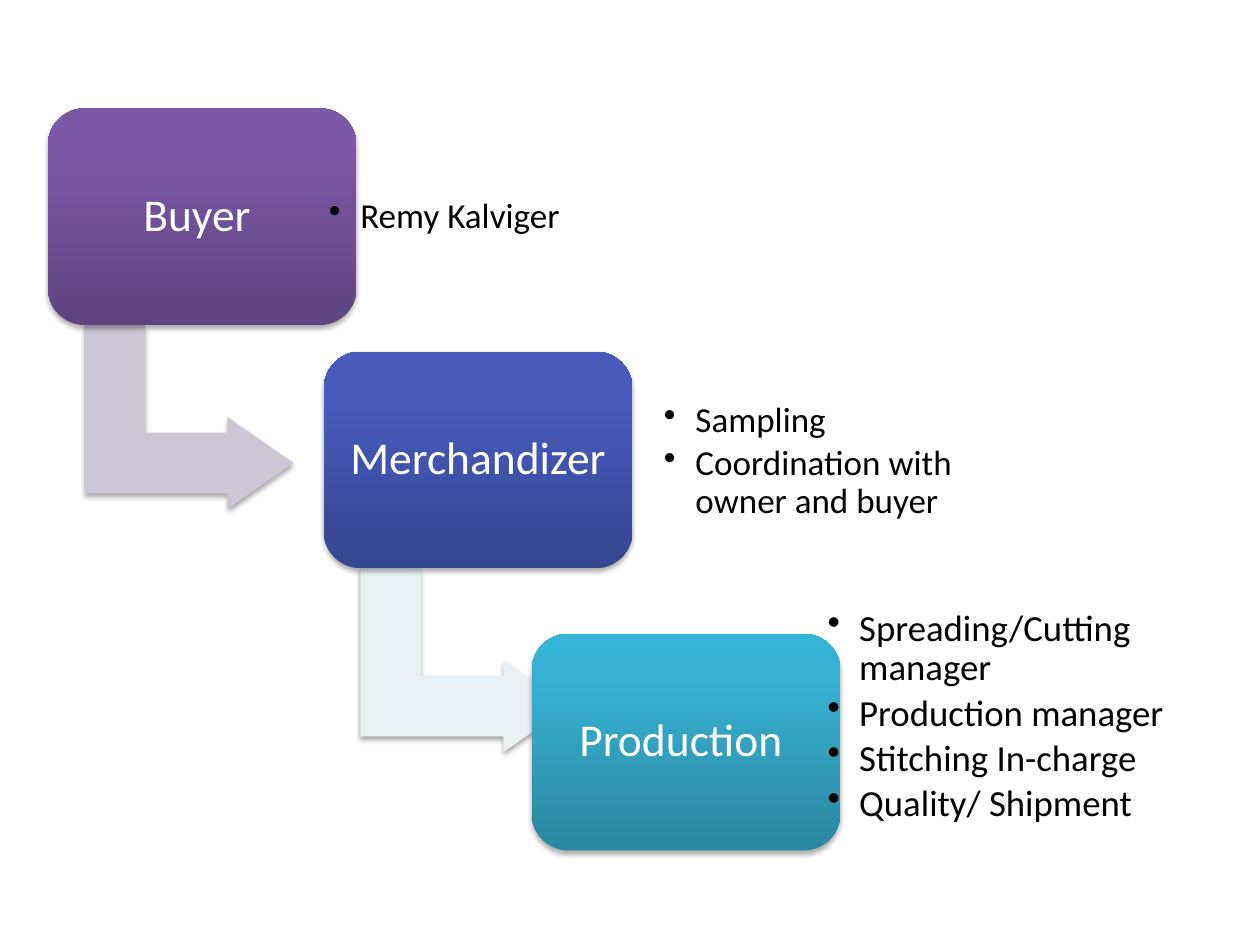
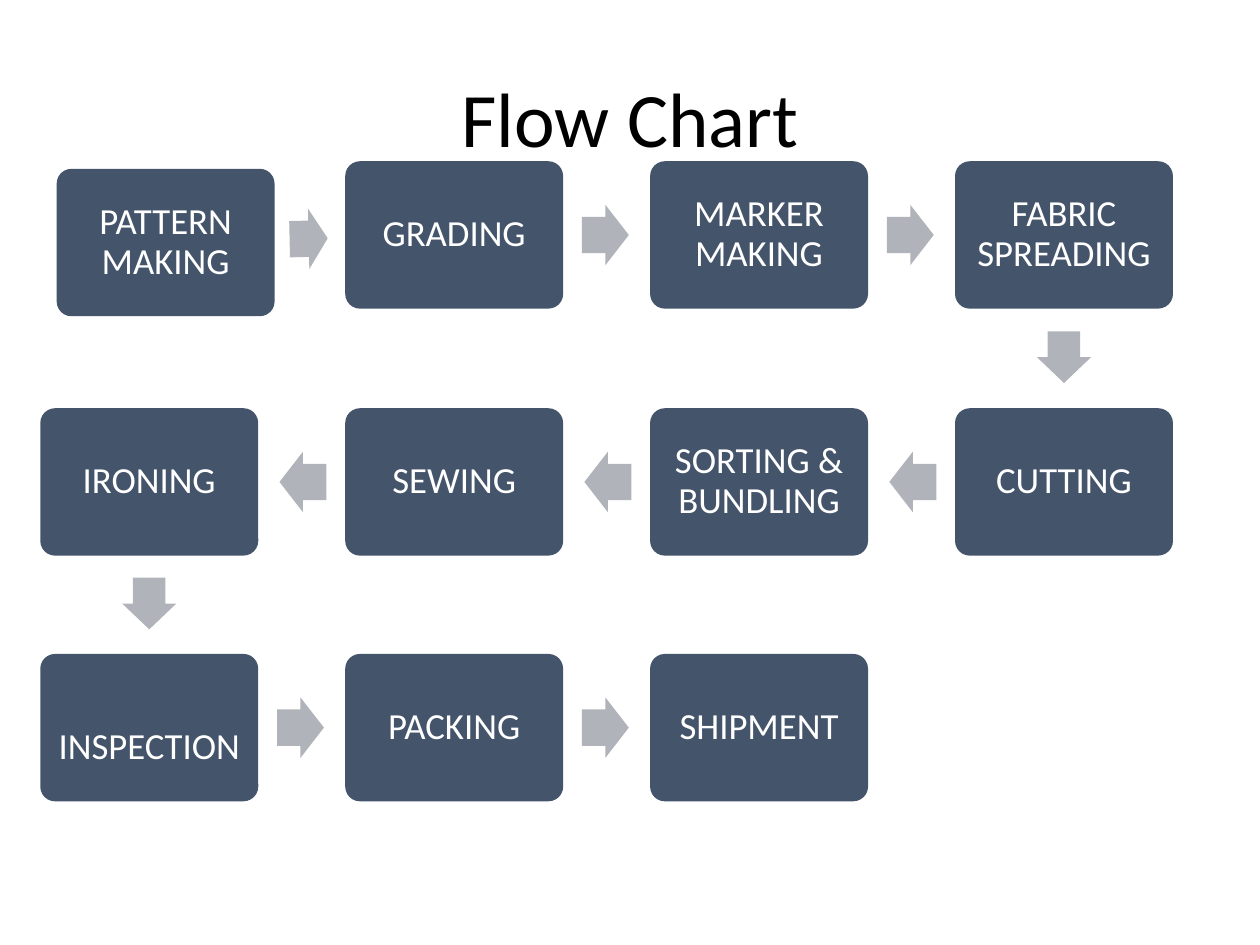
import copy

import pptx
import pptx.dml.color
import pptx.enum.shapes
import pptx.enum.text
import pptx.oxml
import pptx.oxml.ns
import pptx.util

Inches = pptx.util.Inches
Pt = pptx.util.Pt
SHAPES = pptx.enum.shapes.MSO_SHAPE
ALIGN = pptx.enum.text.PP_ALIGN
qn = pptx.oxml.ns.qn

FONT = "Calibri"
COLORS = {
    "ink": "000000",
    "paper": "FFFFFF",
    "step": "44546A",
    "step_arrow": "B0B3B9",
    "buyer_arrow": "CDC6D7",
    "merchandizer_arrow": "E9F1F5",
}

# Each role: gradient from bottom to top, arrow to the next role, list frame
ROLES = [
    {"label": "Buyer ", "at": (0.38, 0.86), "arrow": "buyer_arrow",
     "gradient": ("5F4480", "7B58A6", "7C57A8"),
     "duties": ["Remy Kalviger"], "duties_at": (2.5, 1.03, 2.44, 1.39), "size": 20},
    {"label": "Merchandizer ", "at": (2.57, 2.79), "arrow": "merchandizer_arrow",
     "gradient": ("374691", "475BBC", "455ABF"),
     "duties": ["Sampling", "Coordination with owner and buyer"],
     "duties_at": (5.16, 2.97, 2.99, 1.39), "size": 20},
    {"label": "Production ", "at": (4.22, 5.03), "arrow": None,
     "gradient": ("2A88A2", "37B1D2", "34B4D6"),
     "duties": ["Spreading/Cutting manager", "Production manager",
                "Stitching In-charge", "Quality/ Shipment"],
     "duties_at": (6.46, 4.69, 3.54, 2), "size": 21},
]
ROLE_SIZE = (2.45, 1.72)
GRADIENT_STOPS = (0, 0.8, 1)

TITLE = "Flow Chart"
STEPS = ["PATTERN MAKING", "GRADING", "MARKER MAKING", "FABRIC SPREADING",
         "CUTTING", "SORTING & BUNDLING", "SEWING", "IRONING",
         "INSPECTION", "PACKING", "SHIPMENT"]
STEP_SIZE = (1.73, 1.17)
STEP_LEFT, STEP_PITCH, STEPS_PER_ROW = 0.32, 2.42, 4
ROW_TOPS = (1.28, 3.24, 5.19)
FIRST_STEP_SHIFT = (0.13, 0.06)
LOWERED_STEP = "INSPECTION"


def rgb(color):
    return pptx.dml.color.RGBColor.from_string(COLORS.get(color, color))


def add_shape(slide, kind, frame, color, adjustments):
    """Add a borderless preset shape with a solid fill."""
    shape = slide.shapes.add_shape(kind, *map(Inches, frame))
    shape.shadow.inherit = False
    shape.line.fill.background()
    shape.fill.solid()
    shape.fill.fore_color.rgb = rgb(color)
    for index, value in enumerate(adjustments):
        shape.adjustments[index] = value
    return shape


def set_up_text(shape, inset):
    frame = shape.text_frame
    frame.word_wrap = True
    frame.vertical_anchor = pptx.enum.text.MSO_ANCHOR.MIDDLE
    frame.margin_left = frame.margin_right = Inches(inset)
    frame.margin_top = frame.margin_bottom = Inches(inset)
    return frame


def write(paragraph, text, size, color, align=ALIGN.CENTER, line_spacing=0.9):
    paragraph.alignment = align
    paragraph.line_spacing = line_spacing
    run = paragraph.add_run()
    run.text = text
    run.font.name = FONT
    run.font.size = Pt(size)
    run.font.color.rgb = rgb(color)


def add_soft_shadow(shape):
    effects = shape._element.spPr.find(qn("a:effectLst"))
    effects.append(pptx.oxml.parse_xml(
        '<a:outerShdw xmlns:a="http://schemas.openxmlformats.org/drawingml/2006/main"'
        f' blurRad="{Pt(3.1)}" dist="{Pt(1.8)}" dir="5400000" rotWithShape="0">'
        f'<a:srgbClr val="{COLORS["ink"]}"><a:alpha val="35000"/></a:srgbClr>'
        '</a:outerShdw>'))


def fill_gradient(shape, colors):
    shape.fill.gradient()
    shape.fill.gradient_angle = 90
    stop_list = shape._element.spPr.find(qn("a:gradFill")).find(qn("a:gsLst"))
    stop_list.append(copy.deepcopy(stop_list[0]))
    for stop, position, color in zip(shape.fill.gradient_stops, GRADIENT_STOPS, colors):
        stop.position = position
        stop.color.rgb = rgb(color)


def add_bullet(paragraph):
    properties = paragraph._p.get_or_add_pPr()
    properties.set("marL", str(Inches(0.25)))
    properties.set("indent", str(-Inches(0.25)))
    bullet = properties.makeelement(qn("a:buChar"), {"char": "•"})
    properties.append(bullet)


def add_role(slide, role):
    left, top = role["at"]
    if role["arrow"]:
        arrow = add_shape(slide, SHAPES.BENT_UP_ARROW, (left + 0.39, top + 1.62, 1.46, 1.66),
                          role["arrow"], (0.33, 0.25, 0.36))
        arrow.rotation = 90
        add_soft_shadow(arrow)
    box = add_shape(slide, SHAPES.ROUNDED_RECTANGLE, (left, top, *ROLE_SIZE),
                    role["gradient"][0], (0.17,))
    fill_gradient(box, role["gradient"])
    add_soft_shadow(box)
    write(set_up_text(box, 0.11).paragraphs[0], role["label"], 26, "paper")


def add_duties(slide, role):
    box = slide.shapes.add_textbox(*map(Inches, role["duties_at"]))
    frame = set_up_text(box, 0.11)
    for index, duty in enumerate(role["duties"]):
        paragraph = frame.add_paragraph() if index else frame.paragraphs[0]
        write(paragraph, duty, role["size"], "ink", ALIGN.LEFT)
        paragraph.space_after = Pt(0.15 * role["size"])
        add_bullet(paragraph)


def step_position(index):
    """Left and top of a step; every second row runs from right to left."""
    row, column = divmod(index, STEPS_PER_ROW)
    if row % 2:
        column = STEPS_PER_ROW - 1 - column
    left, top = STEP_LEFT + column * STEP_PITCH, ROW_TOPS[row]
    if index == 0:
        left, top = left + FIRST_STEP_SHIFT[0], top + FIRST_STEP_SHIFT[1]
    return left, top


def add_step(slide, index):
    box = add_shape(slide, SHAPES.ROUNDED_RECTANGLE, (*step_position(index), *STEP_SIZE),
                    "step", (0.1,))
    frame = set_up_text(box, 0.08)
    if STEPS[index] == LOWERED_STEP:
        frame.margin_top = Inches(0.4)
    write(frame.paragraphs[0], STEPS[index], 21, "paper")


def add_step_arrow(slide, index):
    """Put an arrow in the gap between a step and the next one."""
    (left, top), (next_left, next_top) = step_position(index), step_position(index + 1)
    width, height = STEP_SIZE
    center_x = (left + next_left + width) / 2
    center_y = (top + next_top + height) / 2
    if index % STEPS_PER_ROW == STEPS_PER_ROW - 1:
        kind, center_y = SHAPES.DOWN_ARROW, center_y - 0.01
        size = (0.43, 0.41)
    else:
        forward = next_left > left
        kind = SHAPES.RIGHT_ARROW if forward else SHAPES.LEFT_ARROW
        center_x += -0.01 if forward else 0.01
        size = (0.54 * (abs(next_left - left) - width), 0.48)
    arrow = add_shape(slide, kind, (center_x - size[0] / 2, center_y - size[1] / 2, *size),
                      "step_arrow", (0.6, 0.5))
    if index == 0:
        arrow.rotation = 358.7


def build_roles(presentation):
    slide = presentation.slides.add_slide(presentation.slide_layouts[6])
    for role in ROLES:
        add_role(slide, role)
    for role in ROLES:
        add_duties(slide, role)


def build_flow_chart(presentation):
    slide = presentation.slides.add_slide(presentation.slide_layouts[5])
    title = slide.shapes.title
    title.left, title.top, title.width, title.height = map(Inches, (0.5, 0.3, 9, 1.25))
    title.text_frame.vertical_anchor = pptx.enum.text.MSO_ANCHOR.MIDDLE
    write(title.text_frame.paragraphs[0], TITLE, 44, "ink", line_spacing=1.0)
    for index in range(len(STEPS)):
        add_step(slide, index)
        if index + 1 < len(STEPS):
            add_step_arrow(slide, index)


def main():
    presentation = pptx.Presentation()
    presentation.slide_width, presentation.slide_height = Inches(10), Inches(7.5)
    build_roles(presentation)
    build_flow_chart(presentation)
    presentation.save("out.pptx")


if __name__ == "__main__":
    main()
